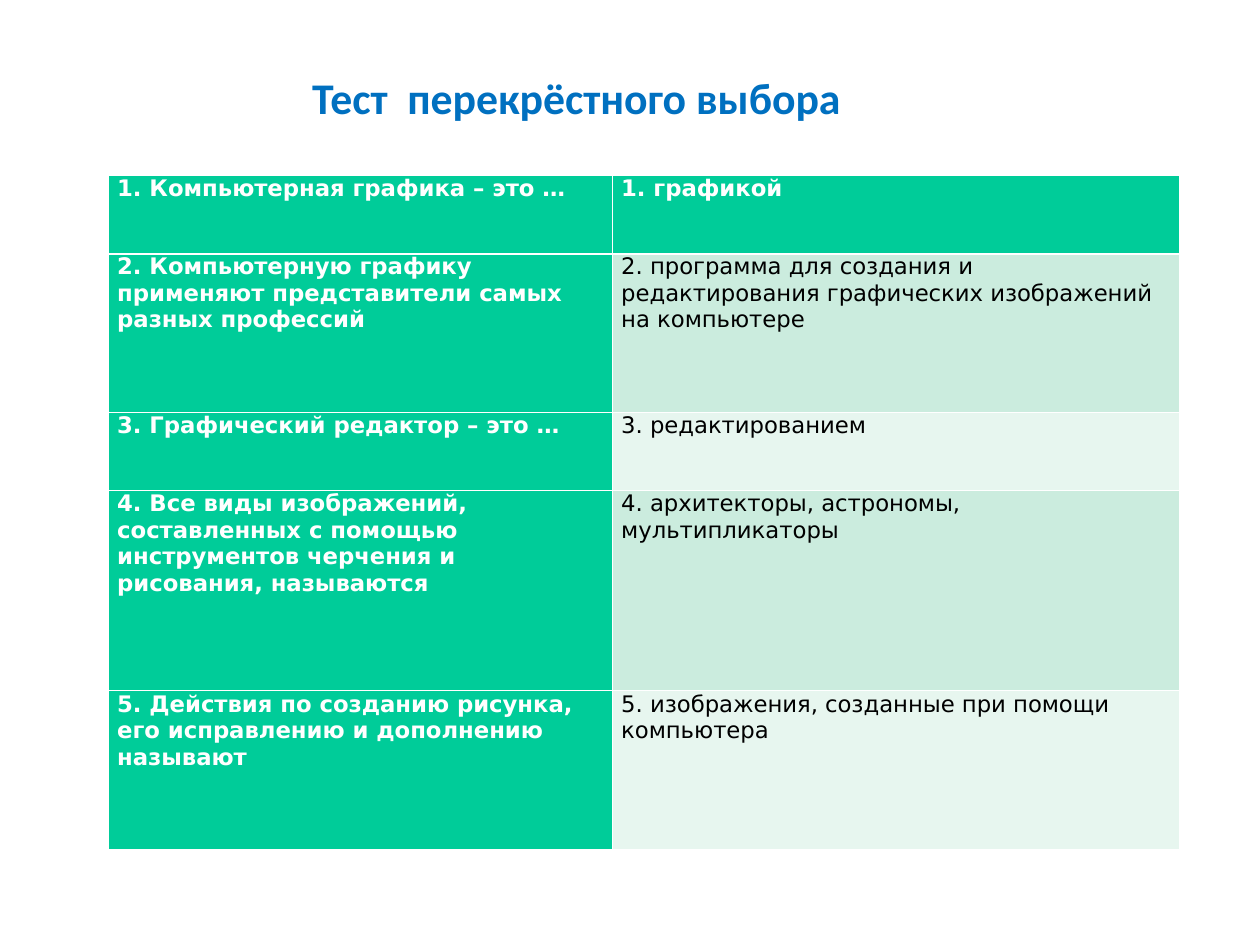
"""Build a matching-test slide with a title and a two-column table."""
import lxml.etree
import pptx
import pptx.dml.color
import pptx.enum.text
import pptx.oxml.ns
import pptx.util

COLORS = {
    "title": "0070C0",
    "header": "00CC99",
    "dark_band": "CBECDE",
    "light_band": "E7F6EF",
    "white": "FFFFFF",
    "black": "000000",
}
COLUMN_WIDTHS = [288, 324]
ROW_HEIGHTS = [44.6, 90.7, 44.6, 114.5, 90.7]
ROWS = [
    ("1. Компьютерная графика – это …", "1. графикой"),
    ("2. Компьютерную графику применяют представители самых разных профессий",
     "2. программа для создания и редактирования графических изображений на компьютере"),
    ("3. Графический редактор – это …", "3. редактированием"),
    ("4. Все виды изображений, составленных с помощью инструментов черчения и рисования, называются",
     "4. архитекторы, астрономы, мультипликаторы"),
    ("5. Действия по созданию рисунка, его исправлению и дополнению называют",
     "5. изображения, созданные при помощи компьютера"),
]


class SlideBuilder:
    def __init__(self, slide):
        self.slide = slide
        self.title_font = "Calibri"
        self.table_font = "DejaVu Sans"

    def color(self, name):
        return pptx.dml.color.RGBColor.from_string(COLORS[name])

    def format_runs(self, paragraph, font_name, size, color, bold):
        for run in paragraph.runs:
            run.font.name = font_name
            run.font.size = pptx.util.Pt(size)
            run.font.bold = bold
            run.font.color.rgb = self.color(color)

    def place(self, shape, left, top, width, height):
        shape.left, shape.top = pptx.util.Pt(left), pptx.util.Pt(top)
        shape.width, shape.height = pptx.util.Pt(width), pptx.util.Pt(height)

    def title(self, text, left, top, width, height):
        shape = self.slide.shapes.title
        self.place(shape, left, top, width, height)
        frame = shape.text_frame
        frame.text = text
        frame.word_wrap = False
        frame.auto_size = pptx.enum.text.MSO_AUTO_SIZE.SHAPE_TO_FIT_TEXT
        frame.vertical_anchor = pptx.enum.text.MSO_ANCHOR.TOP
        paragraph = frame.paragraphs[0]
        paragraph.alignment = pptx.enum.text.PP_ALIGN.LEFT
        self.format_runs(paragraph, self.title_font, 25, "title", True)

    def borders(self, cell, widths):
        properties = cell._tc.get_or_add_tcPr()
        for side, width in widths.items():
            line = lxml.etree.SubElement(
                properties, pptx.oxml.ns.qn(f"a:ln{side}"), w=str(pptx.util.Pt(width)))
            fill = lxml.etree.SubElement(line, pptx.oxml.ns.qn("a:solidFill"))
            lxml.etree.SubElement(fill, pptx.oxml.ns.qn("a:srgbClr"), val=COLORS["white"])

    def cell(self, cell, text, row, column):
        is_header = row == 0 or column == 0
        band = "dark_band" if row % 2 else "light_band"
        cell.margin_left = cell.margin_right = pptx.util.Pt(5)
        cell.margin_top = cell.margin_bottom = 0
        cell.text_frame.text = text
        paragraph = cell.text_frame.paragraphs[0]
        paragraph.line_spacing = 1.01
        self.format_runs(paragraph, self.table_font, 13,
                         "white" if is_header else "black", is_header)
        self.borders(cell, {"L": 0.45, "R": 0.45,
                            "T": 1.47 if row == 1 else 0.45,
                            "B": 1.47 if row == 0 else 0.45})
        cell.fill.solid()
        cell.fill.fore_color.rgb = self.color("header" if is_header else band)

    def table(self, rows, left, top, column_widths, row_heights):
        table = self.slide.shapes.add_table(
            len(rows), len(column_widths), pptx.util.Pt(left), pptx.util.Pt(top),
            pptx.util.Pt(sum(column_widths)), pptx.util.Pt(sum(row_heights))).table
        table.first_col = True
        for column, width in zip(table.columns, column_widths):
            column.width = pptx.util.Pt(width)
        for row, height in zip(table.rows, row_heights):
            row.height = pptx.util.Pt(height)
        for row_index, texts in enumerate(rows):
            for column_index, text in enumerate(texts):
                self.cell(table.cell(row_index, column_index), text, row_index, column_index)


def main():
    presentation = pptx.Presentation()
    presentation.slide_width = pptx.util.Pt(720)
    presentation.slide_height = pptx.util.Pt(540)
    builder = SlideBuilder(presentation.slides.add_slide(presentation.slide_layouts[5]))
    builder.title("Тест  перекрёстного выбора", 171.2, 36.8, 318, 37)
    builder.table(ROWS, 62, 100.4, COLUMN_WIDTHS, ROW_HEIGHTS)
    presentation.save("out.pptx")


if __name__ == "__main__":
    main()
